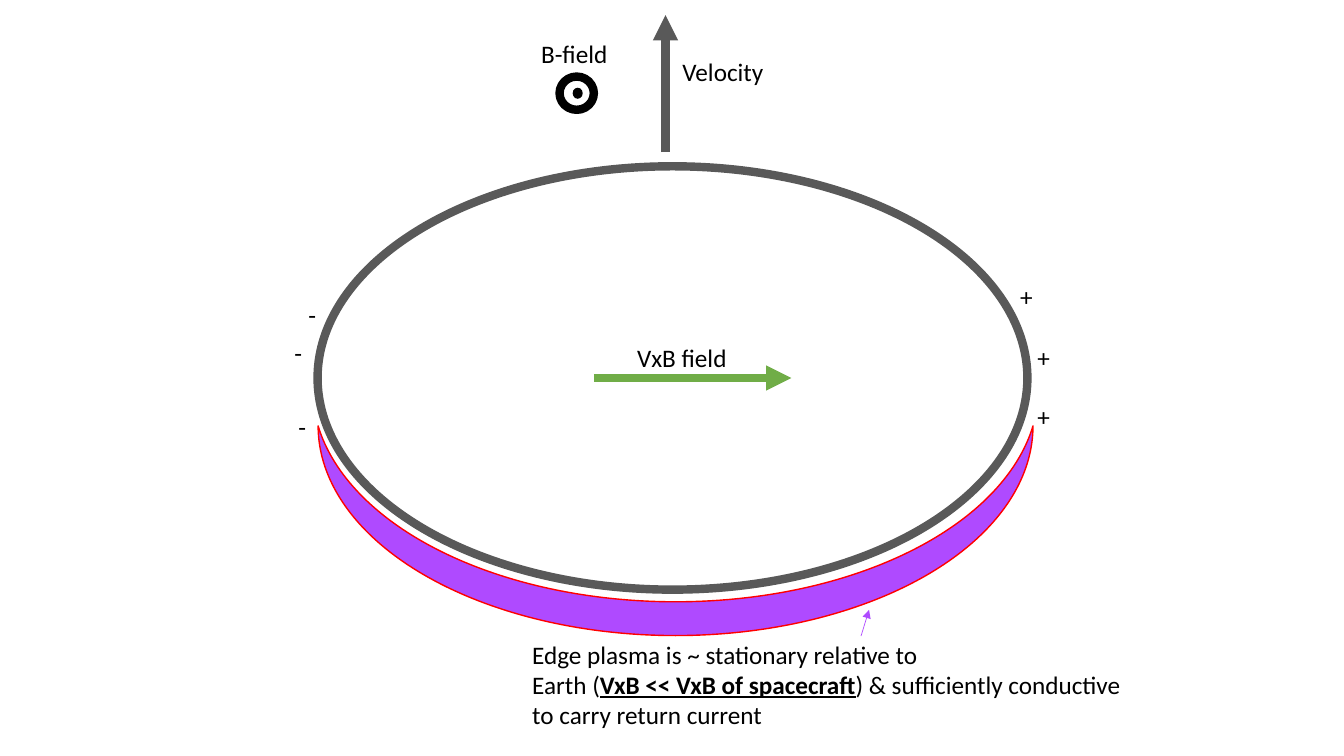
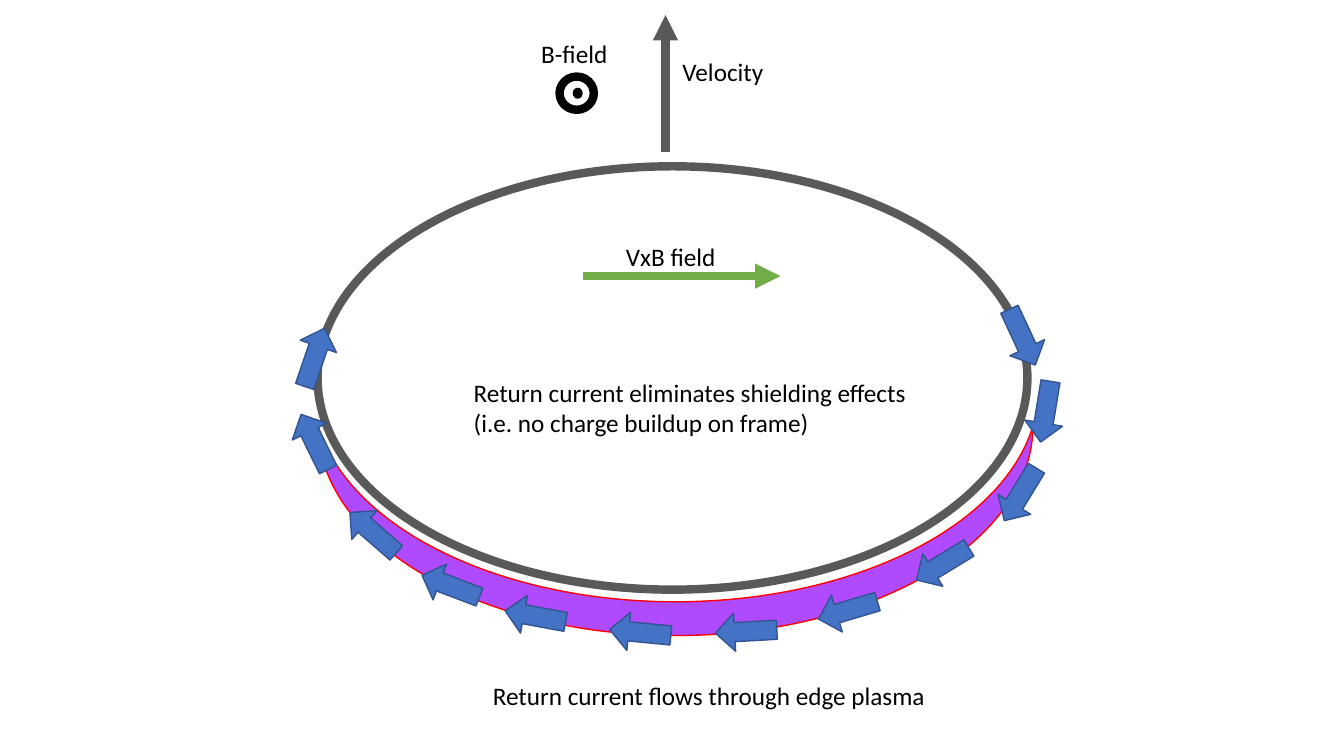
from lxml.etree import SubElement
from pptx import Presentation
from pptx.dml.color import RGBColor
from pptx.enum.shapes import MSO_CONNECTOR, MSO_SHAPE
from pptx.enum.text import MSO_AUTO_SIZE, PP_ALIGN
from pptx.oxml.ns import qn
from pptx.util import Inches, Pt

# Shared colours
GREY, BLACK, GREEN = "595959", "000000", "70AD47"
PURPLE, RED, BLUE, NAVY = "AF4AFF", "FF0000", "4472C4", "325491"


def rgb(value):
    return RGBColor.from_string(value)


class Diagram:
    """Holds the style and the current slide."""

    FONT = {"name": "Calibri", "size": Pt(18)}
    EMPHASIS = {"bold": True, "underline": True}
    FRAME = {"word_wrap": False, "auto_size": MSO_AUTO_SIZE.SHAPE_TO_FIT_TEXT}

    def __init__(self):
        self.prs = Presentation()
        self.prs.slide_width, self.prs.slide_height = Inches(13.33), Inches(7.5)
        self.s = None

    def new_slide(self):
        self.s = self.prs.slides.add_slide(self.prs.slide_layouts[6])

    def shape(self, kind, x, y, w, h, fill=None, line=None, width=1, rotation=0, parent=None):
        shapes = (parent or self.s).shapes
        sp = shapes.add_shape(kind, Inches(x), Inches(y), Inches(w), Inches(h))
        sp.shadow.inherit = False
        sp.rotation = rotation
        if fill:
            sp.fill.solid()
            sp.fill.fore_color.rgb = rgb(fill)
        else:
            sp.fill.background()
        if line:
            sp.line.color.rgb = rgb(line)
            sp.line.width = Pt(width)
        else:
            sp.line.fill.background()
        return sp

    def arrow(self, x1, y1, x2, y2, color, width=6):
        c = self.s.shapes.add_connector(
            MSO_CONNECTOR.STRAIGHT, Inches(x1), Inches(y1), Inches(x2), Inches(y2))
        c.line.color.rgb = rgb(color)
        c.line.width = Pt(width)
        SubElement(c.line._get_or_add_ln(), qn("a:tailEnd"), type="triangle")
        SubElement(c._element.spPr, qn("a:effectLst"))

    def text(self, x, y, w, h, *lines):
        """Each line is a string, or a list of (text, emphasised) runs."""
        tf = self.s.shapes.add_textbox(Inches(x), Inches(y), Inches(w), Inches(h)).text_frame
        for name, value in self.FRAME.items():
            setattr(tf, name, value)
        for i, line in enumerate(lines):
            p = tf.add_paragraph() if i else tf.paragraphs[0]
            p.alignment = PP_ALIGN.LEFT
            for words, emphasised in [(line, False)] if isinstance(line, str) else line:
                r = p.add_run()
                r.text = words
                r.font.color.rgb = rgb(BLACK)
                style = {**self.FONT, **(self.EMPHASIS if emphasised else {})}
                for name, value in style.items():
                    setattr(r.font, name, value)

    def spacecraft(self, field_x, field_y):
        """Frame, velocity, B-field, VxB arrow and edge plasma."""
        self.shape(MSO_SHAPE.OVAL, 3.15, 1.65, 7.04, 4.2, line=GREY, width=6)
        self.arrow(6.6, 1.51, 6.6, 0.15, GREY)
        symbol = self.s.shapes.add_group_shape()
        self.shape(MSO_SHAPE.OVAL, 5.55, 0.76, 0.34, 0.33, line=BLACK, width=6, parent=symbol)
        self.shape(MSO_SHAPE.OVAL, 5.68, 0.87, 0.1, 0.11, fill=BLACK, parent=symbol)
        self.text(5.27, 0.33, 0.87, 0.4, "B-field")
        self.text(6.67, 0.51, 1.01, 0.4, "Velocity")
        self.arrow(field_x, field_y, field_x + 1.96, field_y, GREEN)
        self.text(field_x + 0.33, field_y - 0.4, 1.1, 0.4, "VxB field")
        plasma = self.shape(MSO_SHAPE.MOON, 5.66, 1.72, 2.08, 7.09, PURPLE, RED, rotation=270)
        plasma.adjustments[0] = 0.161


def charge_slide(d):
    d.new_slide()
    d.spacecraft(5.89, 3.75)
    # Charges on the frame
    for x, y in [(10.02, 2.74), (10.19, 3.35), (10.19, 3.93)]:
        d.text(x, y, 0.33, 0.4, "+")
    for x, y in [(2.96, 2.92), (2.82, 3.3), (2.86, 4.03)]:
        d.text(x, y, 0.28, 0.4, "-")
    # Plasma note
    d.text(5.18, 6.29, 6.19, 1.01,
           "Edge plasma is ~ stationary relative to",
           [("Earth (", False), ("VxB << VxB of spacecraft", True),
            (") & sufficiently conductive", False)],
           "to carry return current")
    d.arrow(8.54, 6.31, 8.62, 6.05, PURPLE, 0.5)


def current_slide(d):
    d.new_slide()
    d.spacecraft(5.78, 2.74)
    # Return current, clockwise from the right: left, top, rotation
    flow = [(9.95, 3.04, 335.1), (10.18, 3.78, 9.3), (9.93, 4.6, 31.4),
            (9.16, 5.29, 58.6), (8.22, 5.75, 73.5), (7.21, 5.96, 86.8),
            (6.16, 5.97, 95.5), (5.12, 5.81, 100.4), (4.28, 5.51, 110.8),
            (3.51, 4.98, 131.1), (2.93, 4.08, 153.9), (2.93, 3.24, 198.8)]
    for x, y, angle in flow:
        d.shape(MSO_SHAPE.DOWN_ARROW, x, y, 0.38, 0.61, BLUE, NAVY, rotation=angle)
    # Notes on the current
    d.text(4.79, 6.7, 4.57, 0.4, "Return current flows through edge plasma")
    d.text(4.6, 3.69, 4.54, 0.71,
           "Return current eliminates shielding effects",
           "(i.e. no charge buildup on frame)")


def main():
    d = Diagram()
    charge_slide(d)
    current_slide(d)
    d.prs.save("out.pptx")


if __name__ == "__main__":
    main()
